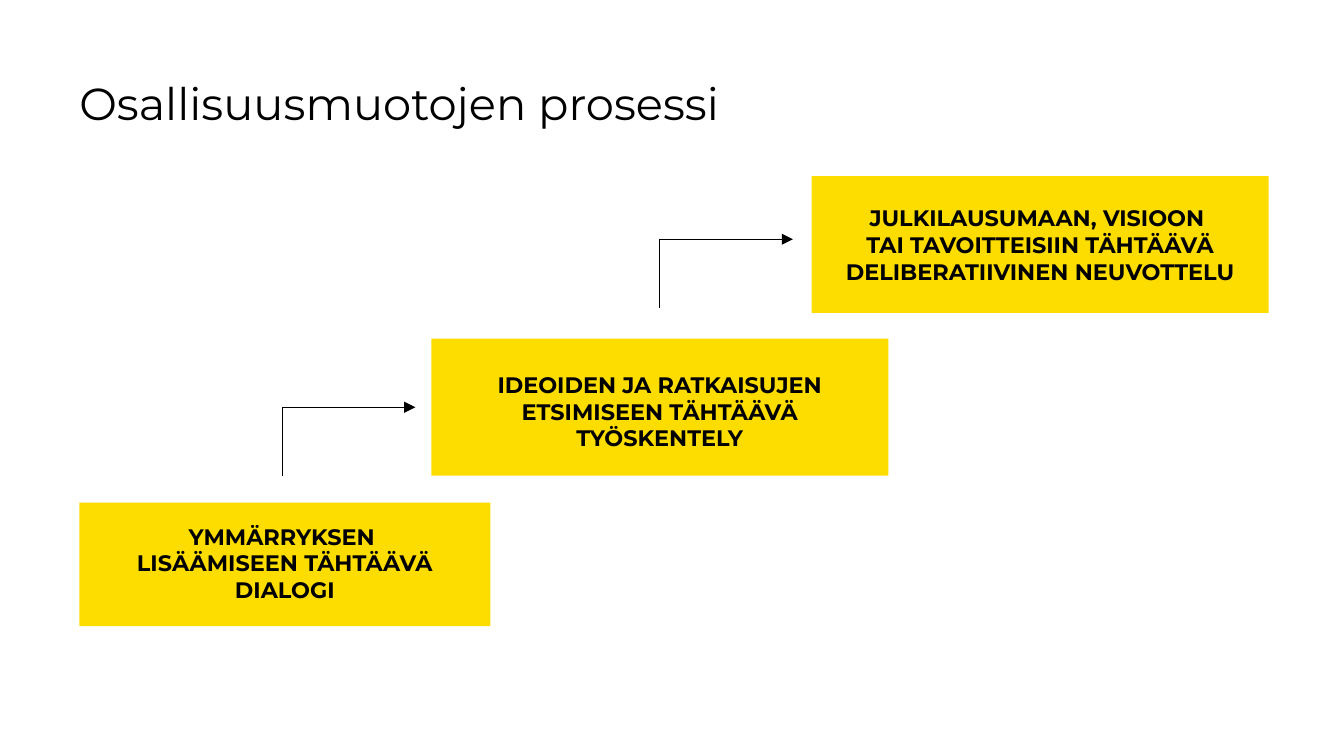
from pptx import Presentation
from pptx.util import Pt
from pptx.dml.color import RGBColor
from pptx.enum.shapes import MSO_SHAPE as Shape, MSO_CONNECTOR as Link
from pptx.enum.text import PP_ALIGN as Align, MSO_ANCHOR as Anchor
from pptx.oxml.ns import qn
from lxml.etree import SubElement as Sub

TITLE = "Osallisuusmuotojen prosessi"
STEPS = [
    ("YMMÄRRYKSEN \vLISÄÄMISEEN TÄHTÄÄVÄ DIALOGI",
     (42.5, 269.3, 220.3, 66.2), 276.5),
    ("IDEOIDEN JA RATKAISUJEN ETSIMISEEN TÄHTÄÄVÄ TYÖSKENTELY",
     (231.1, 181.4, 244.8, 73.4), 195.1),
    ("JULKILAUSUMAAN, VISIOON \vTAI TAVOITTEISIIN TÄHTÄÄVÄ DELIBERATIIVINEN NEUVOTTELU",
     (434.9, 94.3, 244.8, 73.4), 105.8),
]
ARROWS = [(151.2, 254.9), (353.5, 164.9)]
RUN, RISE = 71.3, 36.7
TEXT_H = 51.1
BLACK, YELLOW = "000000", "FDDD00"
HEAD = {"name": "Montserrat", "size": Pt(24), "bold": False}
LABEL = {"name": "Montserrat", "size": Pt(12), "bold": True}


def pts(*nums):
    return [Pt(n) for n in nums]


def paint(color, code):
    color.rgb = RGBColor.from_string(code)


def write(frame, text, style, align):
    frame.word_wrap = True
    frame.text = text
    para = frame.paragraphs[0]
    para.alignment = align
    for run in para.runs:
        for key, val in style.items():
            setattr(run.font, key, val)
        paint(run.font.color, BLACK)


def add_title(slide):
    title = slide.shapes.title
    title.left, title.top, title.width, title.height = pts(42.5, 20.9, 640.8, 67.7)
    frame = title.text_frame
    for side in ("left", "top", "right", "bottom"):
        setattr(frame, f"margin_{side}", 0)
    frame.vertical_anchor = Anchor.MIDDLE
    write(frame, TITLE, HEAD, Align.LEFT)


def add_step(slide, text, area, top):
    box = slide.shapes.add_shape(Shape.RECTANGLE, *pts(*area))
    box.shadow.inherit = False
    box.fill.solid()
    paint(box.fill.fore_color, YELLOW)
    box.line.fill.background()
    left, _, width, _ = area
    label = slide.shapes.add_textbox(*pts(left, top, width, TEXT_H))
    write(label.text_frame, text, LABEL, Align.CENTER)


def add_arrow(slide, x, y):
    arrow = slide.shapes.add_connector(Link.ELBOW, *pts(x, y, x + RUN, y - RISE))
    arrow.line.width = Pt(0.5)
    arrow.line.fill.solid()
    paint(arrow.line.fill.fore_color, BLACK)
    props = arrow._element.spPr
    Sub(props.find(qn("a:ln")), qn("a:tailEnd"), type="triangle")
    Sub(props, qn("a:effectLst"))
    guides = props.find(qn("a:prstGeom")).find(qn("a:avLst"))
    Sub(guides, qn("a:gd"), name="adj1", fmla="val 0")


def main():
    deck = Presentation()
    deck.slide_width, deck.slide_height = pts(720, 405)
    slide = deck.slides.add_slide(deck.slide_layouts[5])
    add_title(slide)
    for step in STEPS:
        add_step(slide, *step)
    for start in ARROWS:
        add_arrow(slide, *start)
    deck.save("out.pptx")


if __name__ == "__main__":
    main()
